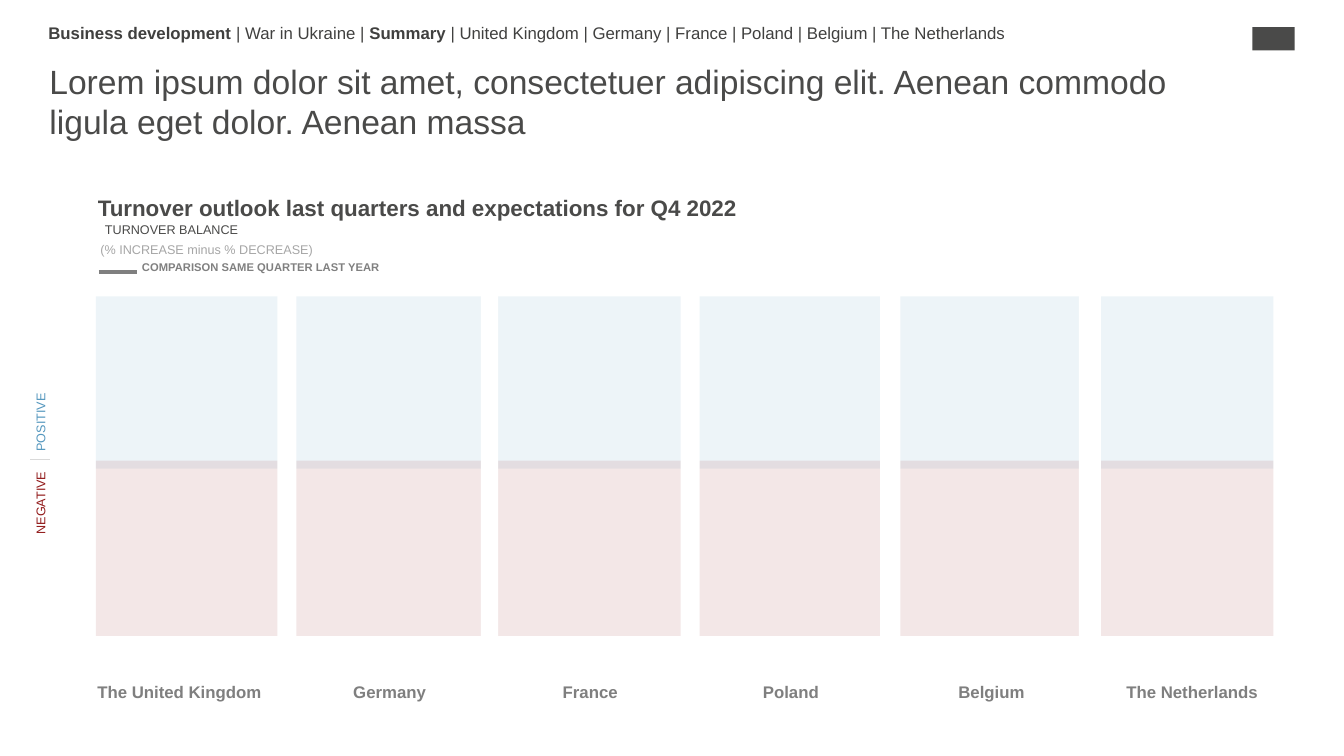
from lxml import etree
from pptx import Presentation
from pptx.dml.color import RGBColor
from pptx.enum.shapes import MSO_CONNECTOR, MSO_SHAPE
from pptx.enum.text import MSO_ANCHOR, PP_ALIGN
from pptx.oxml.ns import qn
from pptx.util import Inches, Pt

COLORS = {
    "dark": "4A4A49", "navigation": "40403F", "grey": "7F7F7F",
    "legend": "808080", "muted": "A6A6A6", "rule": "D9D9D9",
    "positive": "5497BE", "negative": "921A1A", "white": "FFFFFF",
}
COUNTRIES = ["The United Kingdom", "Germany", "France", "Poland", "Belgium", "The Netherlands"]
NAVIGATION = [
    ("Business development ", True),
    ("| War in Ukraine | ", False),
    ("Summary", True),
    (" | United Kingdom | Germany | France | Poland | Belgium | The Netherlands", False),
]


def color(name):
    return RGBColor.from_string(COLORS[name])


def add_run(paragraph, text, size, color_name, bold=False):
    run = paragraph.add_run()
    run.text = text
    for attribute, value in {"name": "Arial", "size": Pt(size), "bold": bold}.items():
        setattr(run.font, attribute, value)
    run.font.color.rgb = color(color_name)


def add_text(slide, box, runs, size, color_name, inset=0.0, **formats):
    """Place a text box; runs is a list of (text, bold) pairs."""
    shape = slide.shapes.add_textbox(*map(Inches, box))
    frame = shape.text_frame
    margins = {
        "margin_left": Inches(inset), "margin_right": Inches(inset),
        "margin_top": Inches(inset / 2), "margin_bottom": Inches(inset / 2),
    }
    frame_formats = {
        "word_wrap": formats.pop("wrap", True),
        "vertical_anchor": formats.pop("anchor", MSO_ANCHOR.TOP),
    }
    for attribute, value in {**margins, **frame_formats}.items():
        setattr(frame, attribute, value)
    paragraph = frame.paragraphs[0]
    for attribute, value in formats.items():
        setattr(paragraph, attribute, value)
    for text, bold in runs:
        add_run(paragraph, text, size, color_name, bold)
    return shape


def add_rectangle(slide, box, color_name, opacity=100):
    shape = slide.shapes.add_shape(MSO_SHAPE.RECTANGLE, *map(Inches, box))
    shape.shadow.inherit = False
    shape.fill.solid()
    shape.fill.fore_color.rgb = color(color_name)
    shape.line.fill.background()
    if opacity < 100:
        fill_color = shape.fill._xPr.find(qn("a:solidFill"))[0]
        etree.SubElement(fill_color, qn("a:alpha"), val=str(opacity * 1000))


def add_line(slide, start, end, color_name, width):
    line = slide.shapes.add_connector(MSO_CONNECTOR.STRAIGHT, *map(Inches, (*start, *end)))
    line.line.color.rgb = color(color_name)
    line.line.width = Pt(width)
    etree.SubElement(line._element.spPr, qn("a:effectLst"))


def add_header(slide, left, top, width):
    # Navigation line and headline
    add_text(slide, (left, top, width, 0.37), NAVIGATION, 12, "navigation",
             anchor=MSO_ANCHOR.MIDDLE, line_spacing=0.8)
    headline = ("Lorem ipsum dolor sit amet, consectetuer adipiscing elit. "
                "Aenean commodo ligula eget dolor. Aenean massa")
    add_text(slide, (left + 0.01, top + 0.44, 11.8, 0.53), [(headline, False)], 24, "dark",
             space_before=Pt(4), space_after=Pt(4))
    # Plain marker in the corner
    add_rectangle(slide, (left + 11.94, top + 0.11, 0.42, 0.23), "dark")


def add_legend(slide, left, top):
    title = "Turnover outlook last quarters and expectations for Q4 2022"
    add_text(slide, (left, top, 10.22, 0.27), [(title, True)], 16, "dark",
             anchor=MSO_ANCHOR.BOTTOM)
    add_text(slide, (left - 0.04, top + 0.23, 1.53, 0.25), [("TURNOVER BALANCE", False)],
             9, "dark", 0.1, wrap=False, alignment=PP_ALIGN.RIGHT)
    add_text(slide, (left - 0.14, top + 0.43, 2.37, 0.25),
             [("(% INCREASE minus % DECREASE)", False)],
             9, "muted", 0.1, wrap=False, alignment=PP_ALIGN.RIGHT)
    add_text(slide, (left + 0.34, top + 0.61, 3.15, 0.24),
             [("COMPARISON SAME QUARTER LAST YEAR", True)], 8, "legend", 0.1)
    line_top = top + 0.78
    add_line(slide, (left + 0.01, line_top), (left + 0.39, line_top), "grey", 3)


def add_bands(slide, left, top, width):
    # Tinted halves, which overlap slightly at the zero line
    add_rectangle(slide, (left, top, width, 1.71), "positive", 10)
    add_rectangle(slide, (left, top + 1.63, width, 1.74), "negative", 10)
    # White gaps between the countries
    for offset, gap in [(1.8, 0.19), (3.82, 0.17), (5.8, 0.19), (7.78, 0.2), (9.75, 0.22)]:
        add_rectangle(slide, (left + offset, top - 0.24, gap, 3.65), "white")


def add_axis(slide, left, zero):
    # Vertical labels on either side of the zero line
    for label, offset, name in [("POSITIVE", -0.37, "positive"), ("NEGATIVE", 0.43, "negative")]:
        box = (left - 0.32, zero + offset - 0.125, 0.84, 0.25)
        shape = add_text(slide, box, [(label, False)], 9, name, 0.1,
                         wrap=False, alignment=PP_ALIGN.CENTER)
        shape.rotation = 270
    add_line(slide, (left, zero), (left + 0.2, zero), "rule", 0.25)


def add_country_table(slide, left, top, width, height):
    table = slide.shapes.add_table(
        1, len(COUNTRIES), *map(Inches, (left, top, width, height))).table
    table.first_row = table.horz_banding = False
    for index, country in enumerate(COUNTRIES):
        table.columns[index].width = Inches(width / len(COUNTRIES))
        cell = table.cell(0, index)
        cell.fill.background()
        cell_formats = {
            "vertical_anchor": MSO_ANCHOR.MIDDLE,
            "margin_left": Inches(0.01), "margin_top": Inches(0.01), "margin_bottom": 0,
            "margin_right": Inches(0.2 if index == 0 else 0.01),
        }
        for attribute, value in cell_formats.items():
            setattr(cell, attribute, value)
        paragraph = cell.text_frame.paragraphs[0]
        paragraph.alignment = PP_ALIGN.CENTER
        add_run(paragraph, country, 12, "grey", True)


def main():
    presentation = Presentation()
    presentation.slide_width = Inches(13.33)
    presentation.slide_height = Inches(7.5)
    slide = presentation.slides.add_slide(presentation.slide_layouts[6])
    add_bands(slide, 0.95, 2.94, 11.68)
    add_legend(slide, 0.97, 1.92)
    add_country_table(slide, 0.88, 6.66, 11.94, 0.41)
    add_axis(slide, 0.3, 4.56)
    add_header(slide, 0.48, 0.16, 12.05)
    presentation.save("out.pptx")


if __name__ == "__main__":
    main()
